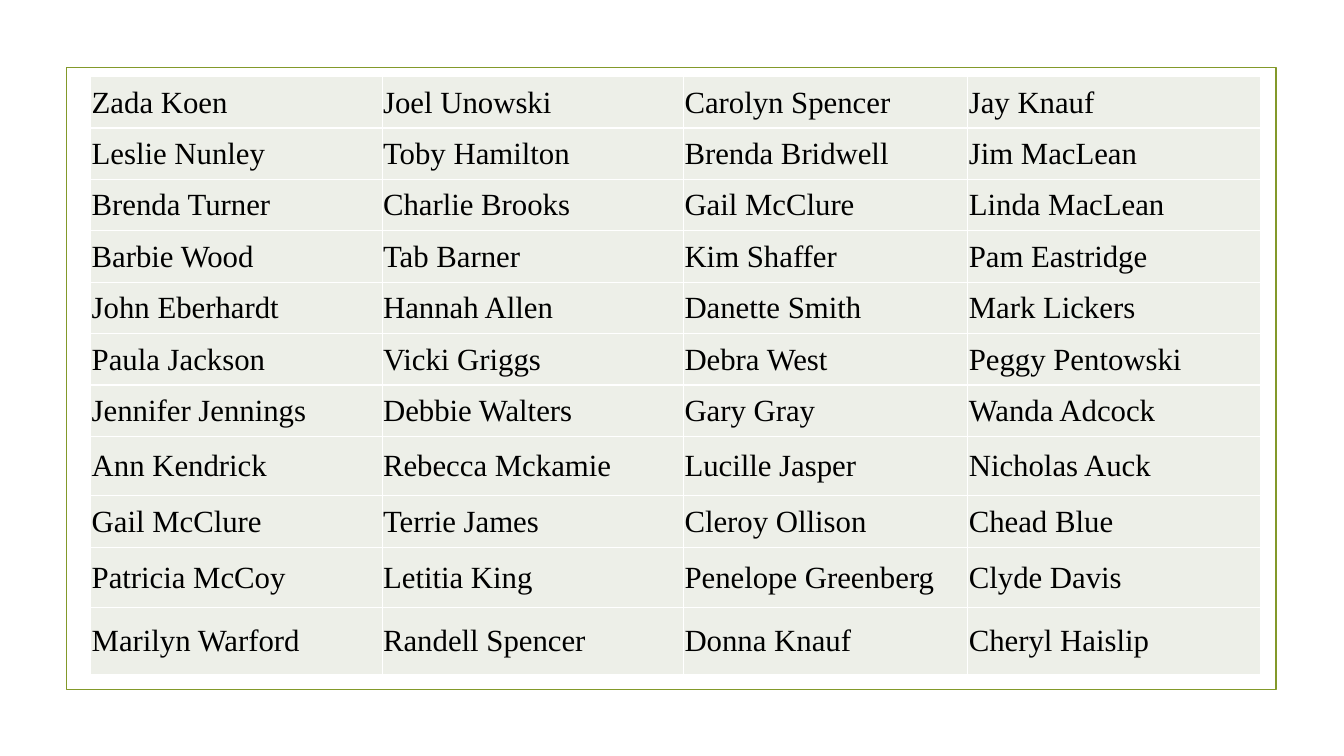
import pptx
import pptx.dml.color
import pptx.enum.shapes
import pptx.enum.text
import pptx.oxml
import pptx.oxml.ns
import pptx.util
from pptx.util import Inches

# Content
NAMES = [
    ("Zada Koen", "Joel Unowski", "Carolyn Spencer", "Jay Knauf"),
    ("Leslie Nunley", "Toby Hamilton", "Brenda Bridwell", "Jim MacLean"),
    ("Brenda Turner", "Charlie Brooks", "Gail McClure", "Linda MacLean"),
    ("Barbie Wood", "Tab Barner", "Kim Shaffer", "Pam Eastridge"),
    ("John Eberhardt", "Hannah Allen", "Danette Smith", "Mark Lickers"),
    ("Paula Jackson", "Vicki Griggs", "Debra West", "Peggy Pentowski"),
    ("Jennifer Jennings", "Debbie Walters", "Gary Gray", "Wanda Adcock"),
    ("Ann Kendrick", "Rebecca Mckamie", "Lucille Jasper", "Nicholas Auck"),
    ("Gail McClure", "Terrie James", "Cleroy Ollison", "Chead Blue"),
    ("Patricia McCoy", "Letitia King", "Penelope Greenberg", "Clyde Davis"),
    ("Marilyn Warford", "Randell Spencer", "Donna Knauf", "Cheryl Haislip"),
]
COLORS = {"frame": "83992A", "cell": "EDEFE8", "border": "FFFFFF", "text": "000000"}
FONT = "Times New Roman"
COLUMN_WIDTHS = [2.89, 2.99, 2.82, 2.9]
ROW_HEIGHT = 0.51
TALL_ROWS = {7: 0.59, 9: 0.6, 10: 0.66}


def color(name):
    return pptx.dml.color.RGBColor.from_string(COLORS[name])


def add_borders(cell):
    properties = cell._tc.get_or_add_tcPr()
    for position, side in enumerate(("lnL", "lnR", "lnT", "lnB")):
        line = pptx.oxml.parse_xml(
            f'<a:{side} {pptx.oxml.ns.nsdecls("a")} w="12700"><a:solidFill>'
            f'<a:srgbClr val="{COLORS["border"]}"/></a:solidFill></a:{side}>')
        properties.insert(position, line)


def fill_cell(cell, name):
    cell.fill.solid()
    cell.fill.fore_color.rgb = color("cell")
    cell.margin_left = cell.margin_right = cell.margin_top = Inches(0.01)
    cell.margin_bottom = 0
    cell.vertical_anchor = pptx.enum.text.MSO_ANCHOR.MIDDLE
    run = cell.text_frame.paragraphs[0].add_run()
    run.text = name
    run.font.name = FONT
    run.font.size = pptx.util.Pt(22)
    run.font.color.rgb = color("text")
    add_borders(cell)


presentation = pptx.Presentation()
presentation.slide_width = Inches(13.33)
presentation.slide_height = Inches(7.5)
slide = presentation.slides.add_slide(presentation.slide_layouts[6])

# Frame around the names
frame = slide.shapes.add_shape(
    pptx.enum.shapes.MSO_SHAPE.RECTANGLE,
    Inches(0.66), Inches(0.67), Inches(12), Inches(6.17))
frame.shadow.inherit = False
frame.fill.background()
frame.line.color.rgb = color("frame")
frame.line.width = pptx.util.Pt(1.25)

# Table of names
row_heights = [TALL_ROWS.get(index, ROW_HEIGHT) for index in range(len(NAMES))]
table = slide.shapes.add_table(
    len(NAMES), len(COLUMN_WIDTHS), Inches(0.9), Inches(0.76),
    Inches(sum(COLUMN_WIDTHS)), Inches(sum(row_heights))).table
table.first_row = False
table.horz_banding = False
for column, width in zip(table.columns, COLUMN_WIDTHS):
    column.width = Inches(width)
for row, height, names in zip(table.rows, row_heights, NAMES):
    row.height = Inches(height)
    for cell, name in zip(row.cells, names):
        fill_cell(cell, name)

presentation.save("out.pptx")
